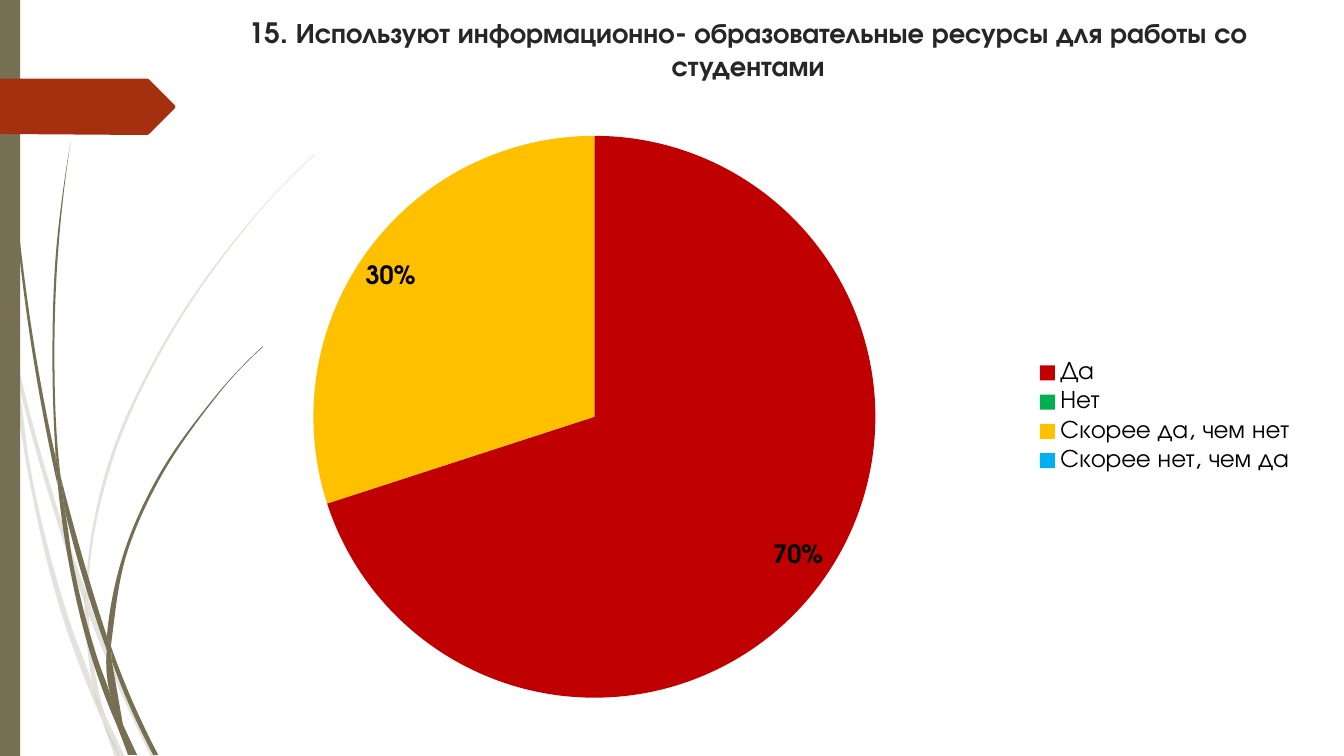
import pptx
import pptx.chart.data
import pptx.dml.color
import pptx.enum.chart
import pptx.enum.shapes
import pptx.enum.text
import pptx.util
from lxml import etree
from math import dist
from pptx.oxml.ns import qn

Inches = pptx.util.Inches
RGBColor = pptx.dml.color.RGBColor

FONT = "TeX Gyre Adventor"
OLIVE = RGBColor(0x76, 0x6F, 0x54)
RUST = RGBColor(0xA5, 0x30, 0x10)
INK = RGBColor(0x26, 0x26, 0x26)
BLACK = RGBColor(0, 0, 0)
SLICES = [
    ("Да", 70, RGBColor(0xC0, 0, 0)),
    ("Нет", 0, RGBColor(0, 0xB0, 0x50)),
    ("Скорее да, чем нет", 30, RGBColor(0xFF, 0xC0, 0)),
    ("Скорее нет, чем да", 0, RGBColor(0, 0xB0, 0xF0)),
]

PALE = [
    ([(0, 2.82), (.09, 3.22), (.11, 3.5)], [(.1, 3.44), (0, 2.99)]),
    ([(.14, 3.45), (.62, 5.2), (.85, 5.86)],
     [(.84, 5.99), (.58, 5.22), (.17, 3.76)]),
    ([(.88, 5.96), (.92, 6.07), (1.27, 6.92), (1.55, 7.51)],
     [(1.5, 7.51), (1.23, 6.94), (.88, 6.1)]),
    ([(1.05, 7.11), (1.24, 7.51)], [(1.19, 7.51)]),
    ([(.11, 3.5), (.17, 3.76), (.31, 4.69), (.7, 6.19), (.93, 6.83), (1.01, 7.14)],
     [(.92, 6.93), (.65, 6.21), (.28, 4.7), (.11, 3.5)]),
    ([(.84, 5.99), (.87, 6.46), (.93, 6.83), (1.05, 7.11)],
     [(1.03, 7.06), (.91, 6.46), (.88, 6.1)]),
    ([(.88, 5.96), (.88, 5.84), (1.1, 4.62), (1.6, 3.49), (2.29, 2.45),
      (2.68, 1.98), (2.9, 1.75), (3.12, 1.54)],
     [(3.12, 1.53), (2.89, 1.75), (2.68, 1.97), (2.28, 2.44), (1.58, 3.48),
      (1.07, 4.61), (.85, 5.84)]),
    ([(1.01, 7.14), (1.14, 7.51)], [(1.19, 7.51)]),
    ([(.85, 5.86), (.84, 5.99), (.88, 6.1)], [(.88, 5.96)]),
    ([(.93, 6.83), (.99, 7.07), (1.19, 7.51)], [(1.05, 7.11), (.96, 6.92)]),
]

DARK = [
    ([(.03, 0), (.03, .48), (.07, 1.1), (.17, 2.33), (.33, 3.55), (.57, 4.81)],
     [(.55, 4.53), (.36, 3.55), (.19, 2.32), (.08, 1.09), (.05, .48), (.03, 0)]),
    ([(.6, 4.72), (.93, 5.9), (1.06, 6.31)],
     [(1.06, 6.45), (.88, 5.92), (.64, 5.05)]),
    ([(1.1, 6.41), (1.36, 7.06), (1.57, 7.49)],
     [(1.52, 7.49), (1.32, 7.08), (1.11, 6.56)]),
    ([(.57, 4.77), (.64, 5.05), (.72, 5.56), (.98, 6.57), (1.1, 6.91), (1.17, 7.22)],
     [(1.11, 7.08), (.93, 6.59), (.68, 5.57), (.57, 4.77)]),
    ([(.6, 4.72), (.58, 4.53), (.54, 3.49), (.58, 2.45), (.63, 1.93), (.7, 1.41)],
     [(.7, 1.41), (.62, 1.93), (.56, 2.45), (.52, 3.49), (.55, 4.49)]),
    ([(1.22, 7.19), (1.36, 7.49)], [(1.33, 7.49)]),
    ([(.55, 4.49), (.57, 4.77), (.64, 5.05)], [(.6, 4.72)]),
    ([(1.1, 6.41), (1.11, 6.33), (1.25, 5.52), (1.58, 4.76), (2.05, 4.06),
      (2.31, 3.74), (2.61, 3.44)],
     [(2.6, 3.44), (2.31, 3.73), (2.04, 4.05), (1.56, 4.74), (1.22, 5.51),
      (1.06, 6.31)]),
    ([(1.17, 7.22), (1.27, 7.49)], [(1.31, 7.49)]),
    ([(1.06, 6.45), (1.1, 6.91), (1.22, 7.19)], [(1.11, 6.56)]),
    ([(1.06, 6.31), (1.06, 6.45), (1.11, 6.56)], [(1.1, 6.41)]),
    ([(1.1, 6.91), (1.17, 7.22), (1.3, 7.49)],
     [(1.33, 7.49), (1.22, 7.19), (1.16, 7.06)]),
]
ARROW = ([(-.01, 0), (1.46, 0)], [(1.48, .01), (1.73, .26)],
         [(1.74, .28)], [(1.73, .3), (1.48, .55)], [(1.46, .56), (-.01, .55)])


def bends(edge):
    if len(edge) < 3:
        return [None] * (len(edge) - 1)
    gaps = [dist(a, b) for a, b in zip(edge, edge[1:])]
    rates = [[(q - p) / gap for p, q in zip(a, b)]
             for a, b, gap in zip(edge, edge[1:], gaps)]
    slopes = [[(p * h + q * g) / (g + h) for p, q in zip(a, b)]
              for a, b, g, h in zip(rates, rates[1:], gaps, gaps[1:])]
    first = [2 * p - q for p, q in zip(rates[0], slopes[0])]
    last = [2 * p - q for p, q in zip(rates[-1], slopes[-1])]
    slopes = [first] + slopes + [last]
    return [([p + u * gap / 3 for p, u in zip(a, s)],
             [q - v * gap / 3 for q, v in zip(b, t)])
            for a, b, s, t, gap in zip(edge, edge[1:], slopes, slopes[1:], gaps)]


def paint(shape, color, alpha=None):
    shape.shadow.inherit = False
    shape.fill.solid()
    shape.fill.fore_color.rgb = color
    shape.line.fill.background()
    if alpha:
        tone = shape.fill._xPr.find(qn("a:solidFill"))[0]
        etree.SubElement(tone, qn("a:alpha")).set("val", str(alpha * 1000))


def outline(shapes, edges, left, top, color, alpha=None):
    spots = [(Inches(left + x), Inches(top + y)) for edge in edges for x, y in edge]
    pen = shapes.build_freeform(*spots[0], scale=1.0)
    pen.add_line_segments(spots[1:], close=True)
    shape = pen.convert_to_shape()
    turns = [turn for edge in edges for turn in [None] + bends(edge)][1:]
    lines = list(shape._element.iter(qn("a:lnTo")))
    for line, turn in zip(lines, turns):
        if turn:
            line.tag = qn("a:cubicBezTo")
            for spot, (x, y) in enumerate(turn):
                knot = etree.Element(qn("a:pt"))
                knot.set("x", str(Inches(left + x) - shape.left))
                knot.set("y", str(Inches(top + y) - shape.top))
                line.insert(spot, knot)
    paint(shape, color, alpha)


def add_grass(slide, left, top, blades, alpha=None):
    group = slide.shapes.add_group_shape()
    for edges in blades:
        outline(group.shapes, edges, left, top, OLIVE, alpha)


def add_side(slide, left, top, width, height):
    add_grass(slide, left, top, PALE, 20)
    add_grass(slide, left, top, DARK)
    bar = slide.shapes.add_shape(
        pptx.enum.shapes.MSO_SHAPE.RECTANGLE,
        Inches(left), Inches(top), Inches(width), Inches(height))
    paint(bar, OLIVE)
    outline(slide.shapes, ARROW, left, top + .78, RUST)


def add_title(slide, left, top, width, height):
    title = slide.shapes.title
    title.left, title.top = Inches(left), Inches(top)
    title.width, title.height = Inches(width), Inches(height)
    frame = title.text_frame
    frame.text = "15. Используют информационно- образовательные ресурсы для работы со студентами"
    frame.word_wrap = True
    frame.auto_size = pptx.enum.text.MSO_AUTO_SIZE.NONE
    frame.vertical_anchor = pptx.enum.text.MSO_ANCHOR.TOP
    line = frame.paragraphs[0]
    line.alignment = pptx.enum.text.PP_ALIGN.CENTER
    style(line.runs[0].font, 20, INK, True)


def style(font, size, color, bold=False):
    font.name = FONT
    font.size = pptx.util.Pt(size)
    font.color.rgb = color
    font.bold = bold


def add_pie(slide, left, top, width, height):
    data = pptx.chart.data.CategoryChartData()
    names, values, colors = zip(*SLICES)
    data.categories = names
    data.add_series("Series 1", values)
    chart = slide.shapes.add_chart(
        pptx.enum.chart.XL_CHART_TYPE.PIE, Inches(left), Inches(top),
        Inches(width), Inches(height), data).chart
    style(chart.font, 18, BLACK)
    chart.has_title = False
    chart.has_legend = True
    chart.legend.position = pptx.enum.chart.XL_LEGEND_POSITION.RIGHT
    chart.legend.include_in_layout = False
    plot = chart.plots[0]
    plot.vary_by_categories = True
    for index, color in enumerate(colors):
        fill = plot.series[0].points[index].format.fill
        fill.solid()
        fill.fore_color.rgb = color
    labels = plot.series[0].data_labels
    labels.show_value = False
    labels.show_percentage = True
    labels.number_format = "0%;;;"
    labels.number_format_is_linked = False
    labels.position = pptx.enum.chart.XL_LABEL_POSITION.BEST_FIT
    style(labels.font, 18, BLACK, True)


def main():
    deck = pptx.Presentation()
    deck.slide_width, deck.slide_height = Inches(13.33), Inches(7.5)
    slide = deck.slides.add_slide(deck.slide_layouts[5])
    add_side(slide, 0, 0, .2, 7.5)
    add_title(slide, 1.87, .1, 11.1, 1.39)
    add_pie(slide, 1.56, 1.21, 11.39, 5.85)
    deck.save("out.pptx")


if __name__ == "__main__":
    main()
